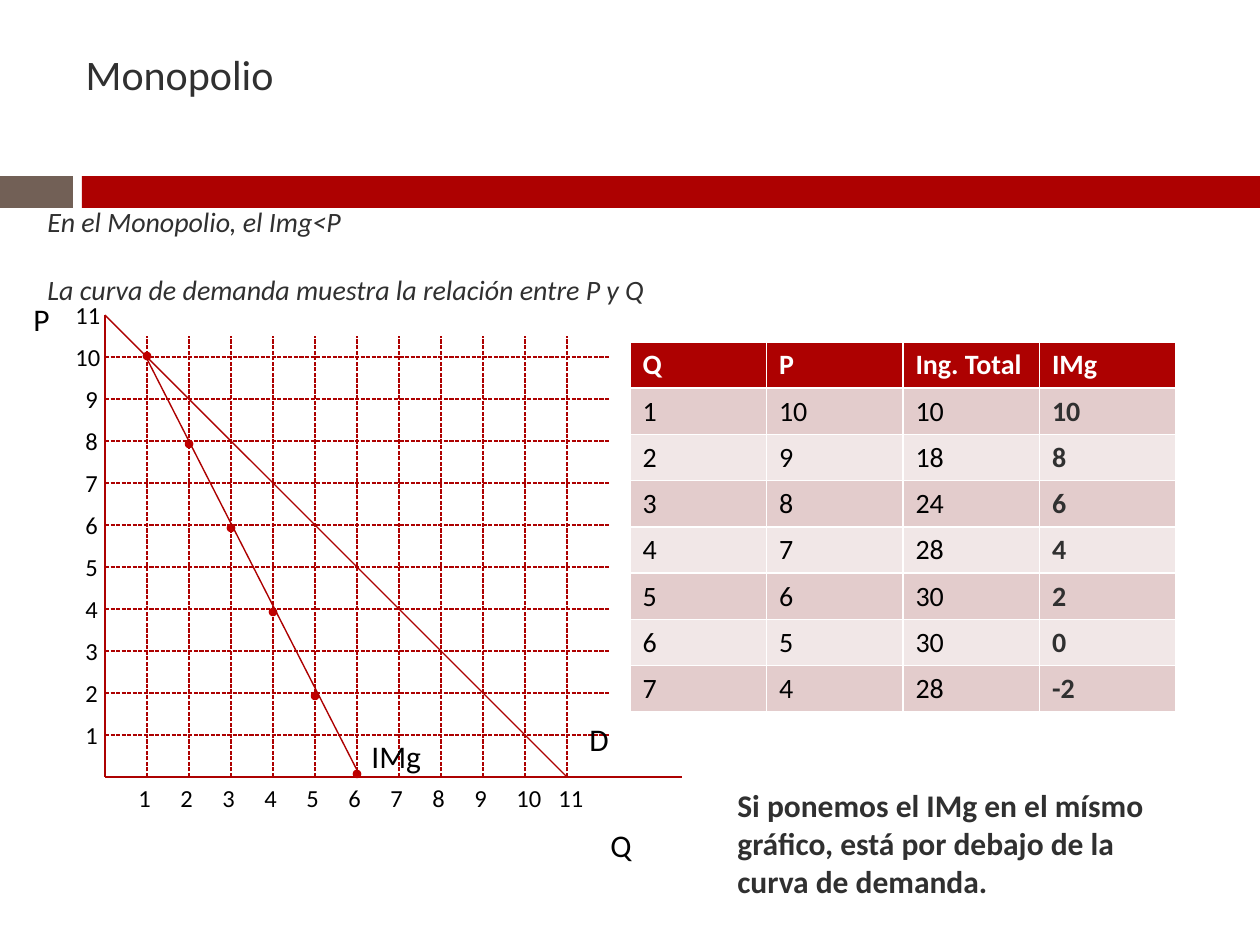
from lxml import etree
from pptx import Presentation
from pptx.dml.color import RGBColor
from pptx.enum.dml import MSO_LINE
from pptx.enum.shapes import MSO_CONNECTOR, MSO_SHAPE
from pptx.enum.text import MSO_ANCHOR, PP_ALIGN
from pptx.oxml.ns import qn
from pptx.util import Emu, Pt

RECTANGLE, OVAL = MSO_SHAPE.RECTANGLE, MSO_SHAPE.OVAL
STRAIGHT, DASH = MSO_CONNECTOR.STRAIGHT, MSO_LINE.SQUARE_DOT
TOP, LEFT = MSO_ANCHOR.TOP, PP_ALIGN.LEFT

FONT = "Calibri"
COLORS = {
    "red": "AD0101", "dot": "C00000", "brown": "726056", "dark": "303030",
    "black": "000000", "white": "FFFFFF", "odd": "E3CCCC", "even": "F1E7E7",
}


def px(value):
    return Emu(round(value * 914400 / 126))


def color(name):
    return RGBColor.from_string(COLORS[name])


class SlideBuilder:
    def __init__(self, slide):
        self.slide = slide

    def style(self, paragraph, size, color_name, bold=False, italic=False):
        font = paragraph.font
        font.name, font.size = FONT, Pt(size)
        font.bold, font.italic = bold, italic
        font.color.rgb = color(color_name)
        paragraph.alignment = LEFT

    def title(self, text, left, top, width, height):
        shape = self.slide.shapes.title
        shape.left, shape.top = px(left), px(top)
        shape.width, shape.height = px(width), px(height)
        shape.text_frame.text = text
        shape.text_frame.vertical_anchor = TOP
        self.style(shape.text_frame.paragraphs[0], 24, "dark")

    def text(self, lines, left, top, width, height, size=18, color_name="black",
             bold=False, italic=False, inset_top=6, gap=0):
        shape = self.slide.shapes.add_textbox(px(left), px(top), px(width), px(height))
        frame = shape.text_frame
        frame.word_wrap = True
        frame.margin_top = px(inset_top)
        frame.text = lines
        for index, paragraph in enumerate(frame.paragraphs):
            self.style(paragraph, size, color_name, bold, italic)
            if index:
                paragraph.space_before = Pt(gap)

    def shape(self, kind, left, top, width, height, color_name, line_width=0):
        shape = self.slide.shapes.add_shape(kind, px(left), px(top), px(width), px(height))
        shape.shadow.inherit = False
        shape.fill.solid()
        shape.fill.fore_color.rgb = color(color_name)
        if line_width:
            shape.line.color.rgb = color(color_name)
            shape.line.width = Pt(line_width)
        else:
            shape.line.fill.background()

    def line(self, x1, y1, x2, y2, dashed=False):
        connector = self.slide.shapes.add_connector(STRAIGHT, px(x1), px(y1), px(x2), px(y2))
        connector.line.color.rgb = color("red")
        connector.line.width = Pt(0.79)
        if dashed:
            connector.line.dash_style = DASH
        etree.SubElement(connector._element.spPr, qn("a:effectLst"))

    def table(self, rows, left, top, column_width, row_height):
        columns = len(rows[0])
        table = self.slide.shapes.add_table(
            len(rows), columns, px(left), px(top),
            px(column_width * columns), px(row_height * len(rows))).table
        for row_index, row in enumerate(rows):
            for column_index, value in enumerate(row):
                cell = table.cell(row_index, column_index)
                cell.text = str(value)
                last = column_index == columns - 1
                if row_index == 0:
                    fill, text_color = "red", "white"
                else:
                    fill = "odd" if row_index % 2 else "even"
                    text_color = "dark" if last else "black"
                cell.fill.solid()
                cell.fill.fore_color.rgb = color(fill)
                self.style(cell.text_frame.paragraphs[0], 16, text_color,
                           bold=row_index == 0 or last)


def main():
    presentation = Presentation()
    presentation.slide_width, presentation.slide_height = px(1260), px(945)
    slide = presentation.slides.add_slide(presentation.slide_layouts[5])
    builder = SlideBuilder(slide)

    # Header
    builder.shape(RECTANGLE, 0, 176, 73, 32, "brown")
    builder.shape(RECTANGLE, 82, 176, 1178, 32, "red")
    builder.title("Monopolio", 73, 42, 756, 63)
    builder.text("En el Monopolio, el Img<P\nLa curva de demanda muestra la relación entre P y Q",
                 35, 165, 903, 186, 16, "dark", italic=True, inset_top=40, gap=19.5)

    # Axes and demand curve
    origin_x, origin_y, step, top_value = 105, 777, 42, 11
    axis_top = origin_y - top_value * step
    builder.line(origin_x, axis_top, origin_x, origin_y)
    builder.line(origin_x, origin_y, 682, origin_y)
    builder.line(origin_x, axis_top, origin_x + top_value * step, origin_y)

    # Grid and tick labels
    for value in range(1, top_value + 1):
        x, y = origin_x + value * step, origin_y - value * step
        builder.line(x, origin_y, x, 336, dashed=True)
        if value < top_value:
            builder.line(origin_x, y, 609, y, dashed=True)
        builder.text(str(value), x - 21, origin_y, 63, 43, 14)
        builder.text(str(value), 73 if value < 10 else 63, y - 21, 63, 43, 14)

    # Marginal revenue curve
    for index, dot_top in enumerate((353, 441, 525, 609, 693, 771)):
        builder.shape(OVAL, 144 + index * step, dot_top, 6, 6, "dot", 1.5)
    builder.line(147, 359, 359, 774)

    # Axis and curve names
    builder.text("P", 21, 294, 42, 50)
    builder.text("Q", 598, 820, 42, 50)
    builder.text("D", 577, 714, 73, 50)
    builder.text("IMg", 359, 731, 82, 50)

    # Revenue table: total = price × quantity, marginal = change in total
    rows = [("Q", "P", "Ing. Total", "IMg")]
    previous_total = 0
    for quantity in range(1, 8):
        price = top_value - quantity
        total = price * quantity
        rows.append((quantity, price, total, total - previous_total))
        previous_total = total
    builder.table(rows, 630, 342, 136.5, 46)

    # Conclusion
    builder.text("Si ponemos el IMg en el mísmo gráfico, está por debajo de la curva de demanda.",
                 725, 780, 451, 199, 18, "dark", bold=True)

    presentation.save("out.pptx")


if __name__ == "__main__":
    main()
